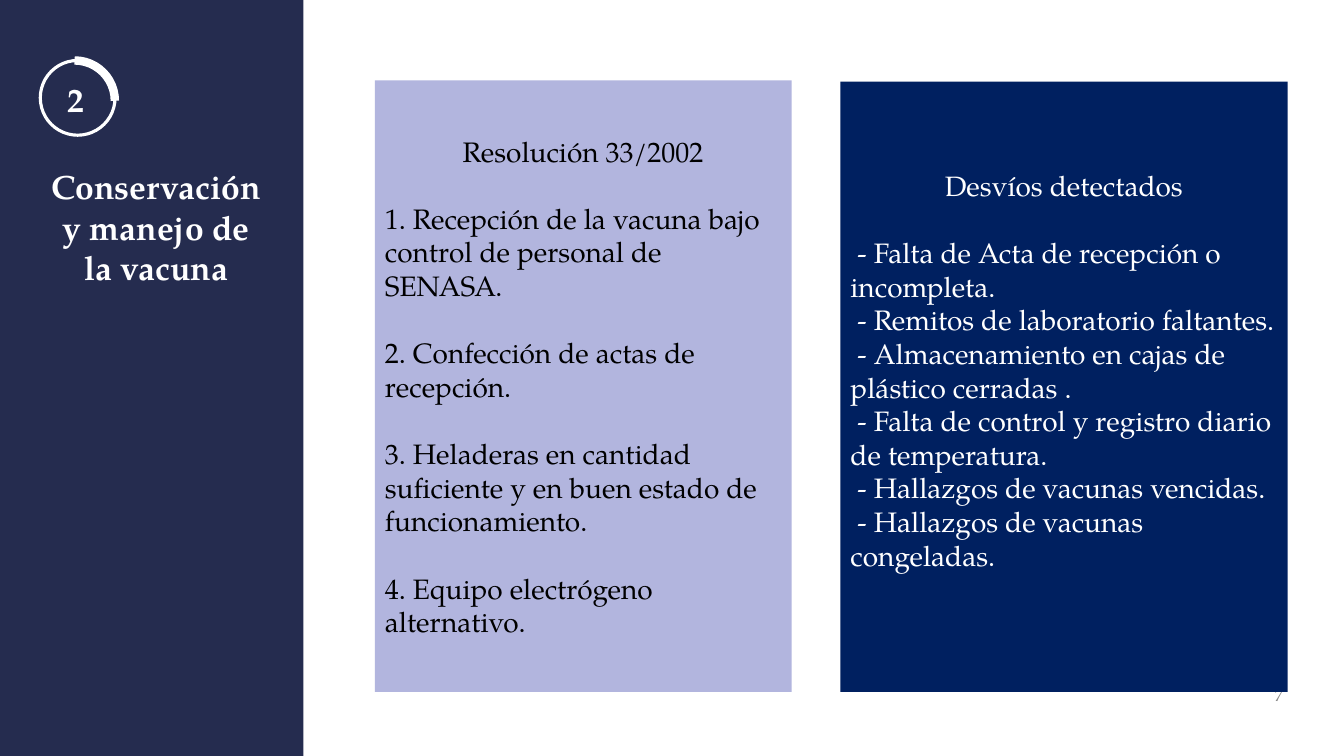
from pptx import Presentation
from pptx.dml.color import RGBColor
from pptx.enum.shapes import MSO_SHAPE
from pptx.enum.text import MSO_ANCHOR, MSO_AUTO_SIZE, PP_ALIGN
from pptx.oxml.ns import qn
from pptx.util import Pt
from lxml import etree

RECT, OVAL, ARC = MSO_SHAPE.RECTANGLE, MSO_SHAPE.OVAL, MSO_SHAPE.ARC
TOP, MID = MSO_ANCHOR.TOP, MSO_ANCHOR.MIDDLE
LEFT, MIDST, RIGHT = PP_ALIGN.LEFT, PP_ALIGN.CENTER, PP_ALIGN.RIGHT
FIXED = MSO_AUTO_SIZE.NONE
FONT = "TeX Gyre Pagella"
COLORS = {
    "band": "252C4F", "rule": "B2B5DE", "fault": "002060",
    "white": "FFFFFF", "black": "000000", "gray": "888888",
}
RULES = [
    "1. Recepción de la vacuna bajo control de personal de SENASA.",
    "2. Confección de actas de recepción.",
    "3. Heladeras en cantidad suficiente y en buen estado de funcionamiento.",
    "4. Equipo electrógeno alternativo.",
]
FAULTS = [
    "- Falta de Acta de recepción o incompleta.",
    "- Remitos de laboratorio faltantes.",
    "- Almacenamiento en cajas de plástico cerradas .",
    "- Falta de control y registro diario de temperatura.",
    "- Hallazgos de vacunas vencidas.",
    "- Hallazgos de vacunas congeladas.",
]


def color(name):
    """Return the named colour."""
    return RGBColor.from_string(COLORS[name])


def place(shape, box):
    """Move a shape into a box given in points."""
    shape.left, shape.top, shape.width, shape.height = map(Pt, box)


def frame(shape, anchor, top=7.2, foot=7.2):
    """Prepare the text frame of a shape."""
    text = shape.text_frame
    text.word_wrap = True
    text.auto_size = FIXED
    text.vertical_anchor = anchor
    text.margin_left = text.margin_right = Pt(7.2)
    text.margin_top, text.margin_bottom = Pt(top), Pt(foot)
    return text


def write(para, words, size, ink, align=LEFT, bold=False, gap=0, indent=0):
    """Write one run in a paragraph without a bullet."""
    props = para._p.get_or_add_pPr()
    props.set("marL", "0")
    props.set("indent", str(Pt(indent)))
    etree.SubElement(props, qn("a:buNone"))
    para.alignment = align
    para.space_before, para.space_after = Pt(gap), Pt(0)
    run = para.add_run()
    run.text = words
    font = run.font
    font.name, font.size, font.bold = FONT, Pt(size), bold
    font.color.rgb = color(ink)


def label(slide, box, words, size, ink, anchor, **style):
    """Add a text box with one line."""
    shape = slide.shapes.add_textbox(*map(Pt, box))
    write(frame(shape, anchor, 3.6, 3.6).paragraphs[0], words, size, ink, **style)


def ring(slide, kind, box, weight):
    """Draw a white outline."""
    shape = slide.shapes.add_shape(kind, *map(Pt, box))
    shape.shadow.inherit = False
    shape.fill.background()
    shape.line.color.rgb = color("white")
    shape.line.width = Pt(weight)


def side(slide, box):
    """Build the dark side band with its step mark and title."""
    x, y, _, _ = box
    band = slide.shapes.add_shape(RECT, *map(Pt, box))
    band.shadow.inherit = False
    band.fill.solid()
    band.fill.fore_color.rgb = color("band")
    band.line.fill.background()
    label(slide, (x + 41, y + 52.6, 53.3, 37.4), "2", 24, "white", TOP, bold=True)
    ring(slide, OVAL, (x + 28.8, y + 43.2, 53.4, 53.4), 2.25)
    ring(slide, ARC, (x + 24.5, y + 43.2, 57.6, 57.6), 6)
    title = slide.shapes.title
    place(title, (x + 25.2, y + 111.6, 172.8, 75.6))
    write(frame(title, TOP).paragraphs[0], "Conservación y manejo de la vacuna",
          24, "white", MIDST, True)
    slide.shapes._spTree.append(title._element)


def panel(slide, slot, box, fill, ink, head, items, gap=0, indent=0, foot=7.2):
    """Fill a body placeholder with a heading and a list."""
    shape = slide.placeholders[slot]
    place(shape, box)
    shape.fill.solid()
    shape.fill.fore_color.rgb = color(fill)
    text = frame(shape, MID, foot=foot)
    write(text.paragraphs[0], head, 20, ink, MIDST)
    for rank, item in enumerate(items):
        write(text.add_paragraph(), item, 20, ink,
              gap=gap if rank else 24, indent=indent)
    slide.shapes._spTree.append(shape._element)


def main():
    """Build and save the slide."""
    deck = Presentation()
    deck.slide_width, deck.slide_height = Pt(960), Pt(540)
    slide = deck.slides.add_slide(deck.slide_layouts[3])
    side(slide, (0, 0, 216.7, 540))
    label(slide, (707.8, 481.7, 216, 28.8), "7", 12, "gray", MID, align=RIGHT)
    panel(slide, 2, (600.3, 58.3, 319.4, 436), "fault", "white",
          "Desvíos detectados", FAULTS, indent=5, foot=31.2)
    panel(slide, 1, (267.7, 57.5, 297.7, 436.8), "rule", "black",
          "Resolución 33/2002", RULES, gap=24)
    deck.save("out.pptx")


if __name__ == "__main__":
    main()
